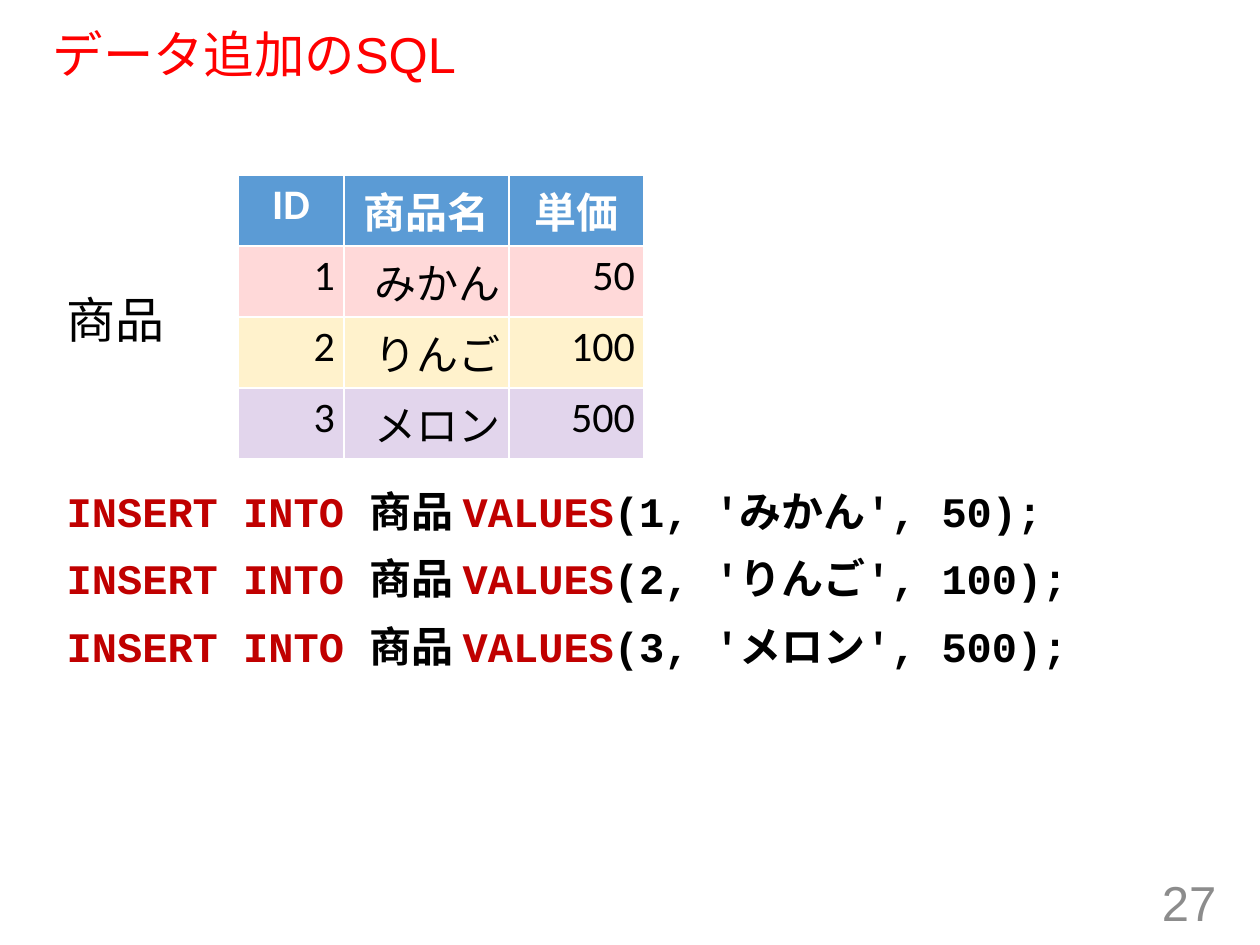
from lxml import etree
from pptx import Presentation
from pptx.dml.color import RGBColor
from pptx.enum.text import MSO_ANCHOR, MSO_AUTO_SIZE, PP_ALIGN
from pptx.oxml.ns import qn
from pptx.util import Cm, Pt

LEFT, MID, RIGHT = PP_ALIGN.LEFT, PP_ALIGN.CENTER, PP_ALIGN.RIGHT
TOP, CENTER = MSO_ANCHOR.TOP, MSO_ANCHOR.MIDDLE
FIXED = MSO_AUTO_SIZE.NONE

COLORS = {
    "title": "FF0000", "key": "C00000", "text": "000000", "page": "8C8C8C",
    "head": "5B9BD5", "white": "FFFFFF",
    "red": "FF0000", "gold": "FFC000", "plum": "7030A0",
}
HEADS = ["ID", "商品名", "単価"]
ITEMS = [(1, "みかん", 50), (2, "りんご", 100), (3, "メロン", 500)]
TINTS = [("red", 15), ("gold", 20), ("plum", 20)]
WIDTHS = [2.13, 3.33, 2.72]


def color(name):
    return RGBColor.from_string(COLORS[name])


def style(para, size, tint, face="Arial", bold=False, align=LEFT):
    para.alignment = align
    font = para.font
    font.name, font.size, font.bold = face, Pt(size), bold
    font.color.rgb = color(tint)


def place(shape, left, top, width, height, anchor=TOP):
    shape.left, shape.top = Cm(left), Cm(top)
    shape.width, shape.height = Cm(width), Cm(height)
    frame = shape.text_frame
    frame.word_wrap = True
    frame.auto_size = FIXED
    frame.vertical_anchor = anchor
    return frame


def add_title(slide):
    frame = place(slide.shapes.title, 0.81, 0.51, 23.5, 1.3, CENTER)
    frame.text = "データ追加のSQL"
    para = frame.paragraphs[0]
    style(para, 28.8, "title")
    para.line_spacing = 0.9


def add_text(slide, text, box, tint, align=LEFT, anchor=TOP, before=0):
    shape = slide.shapes.add_textbox(0, 0, 0, 0)
    frame = place(shape, *box, anchor)
    frame.text = text
    para = frame.paragraphs[0]
    style(para, 28, tint, align=align)
    para.space_before = Pt(before)


def add_code(slide):
    frame = place(slide.placeholders[1], 1.09, 9.65, 23.5, 6.86)
    for row, (num, name, price) in enumerate(ITEMS):
        para = frame.add_paragraph() if row else frame.paragraphs[0]
        style(para, 24, "text", "Courier New", True)
        para.space_before = Pt(10)
        props = para._p.get_or_add_pPr()
        props.set("marL", "0")
        props.set("indent", "0")
        props.insert_element_before(
            etree.Element(qn("a:buNone")), "a:tabLst", "a:defRPr")
        parts = [("INSERT INTO ", "key"), ("商品 ", "text"), ("VALUES", "key"),
                 (f"({num}, '{name}', {price});", "text")]
        for text, tint in parts:
            run = para.add_run()
            run.text = text
            run.font.color.rgb = color(tint)


def fill_cell(cell, text, tint, alpha, ink, bold, align):
    cell.margin_left = cell.margin_right = Cm(0.18)
    cell.margin_top = cell.margin_bottom = Cm(0.1)
    cell.text = str(text)
    style(cell.text_frame.paragraphs[0], 24, ink, "Calibri", bold, align)
    cell.fill.solid()
    cell.fill.fore_color.rgb = color(tint)
    if alpha < 100:
        tone = cell._tc.tcPr.find(".//" + qn("a:srgbClr"))
        etree.SubElement(tone, qn("a:alpha"), val=str(alpha * 1000))


def add_grid(slide):
    rows = [HEADS, *ITEMS]
    table = slide.shapes.add_table(
        len(rows), len(HEADS), Cm(4.8), Cm(3.53),
        Cm(sum(WIDTHS)), Cm(1.07 * len(rows))).table
    for col, width in zip(table.columns, WIDTHS):
        col.width = Cm(width)
    for y, (row, (tint, alpha)) in enumerate(zip(rows, [("head", 100), *TINTS])):
        look = (tint, alpha, "text", False, RIGHT) if y else (
            tint, alpha, "white", True, MID)
        for x, text in enumerate(row):
            fill_cell(table.cell(y, x), text, *look)


def main():
    deck = Presentation()
    deck.slide_width, deck.slide_height = Cm(25.4), Cm(19.05)
    slide = deck.slides.add_slide(deck.slide_layouts[1])
    add_title(slide)
    add_text(slide, "27", (19.05, 17.68, 5.72, 1.02), "page", RIGHT, CENTER)
    add_text(slide, "商品", (1.09, 5.72, 3.94, 2.06), "text", before=10)
    add_code(slide)
    add_grid(slide)
    deck.save("out.pptx")


if __name__ == "__main__":
    main()
